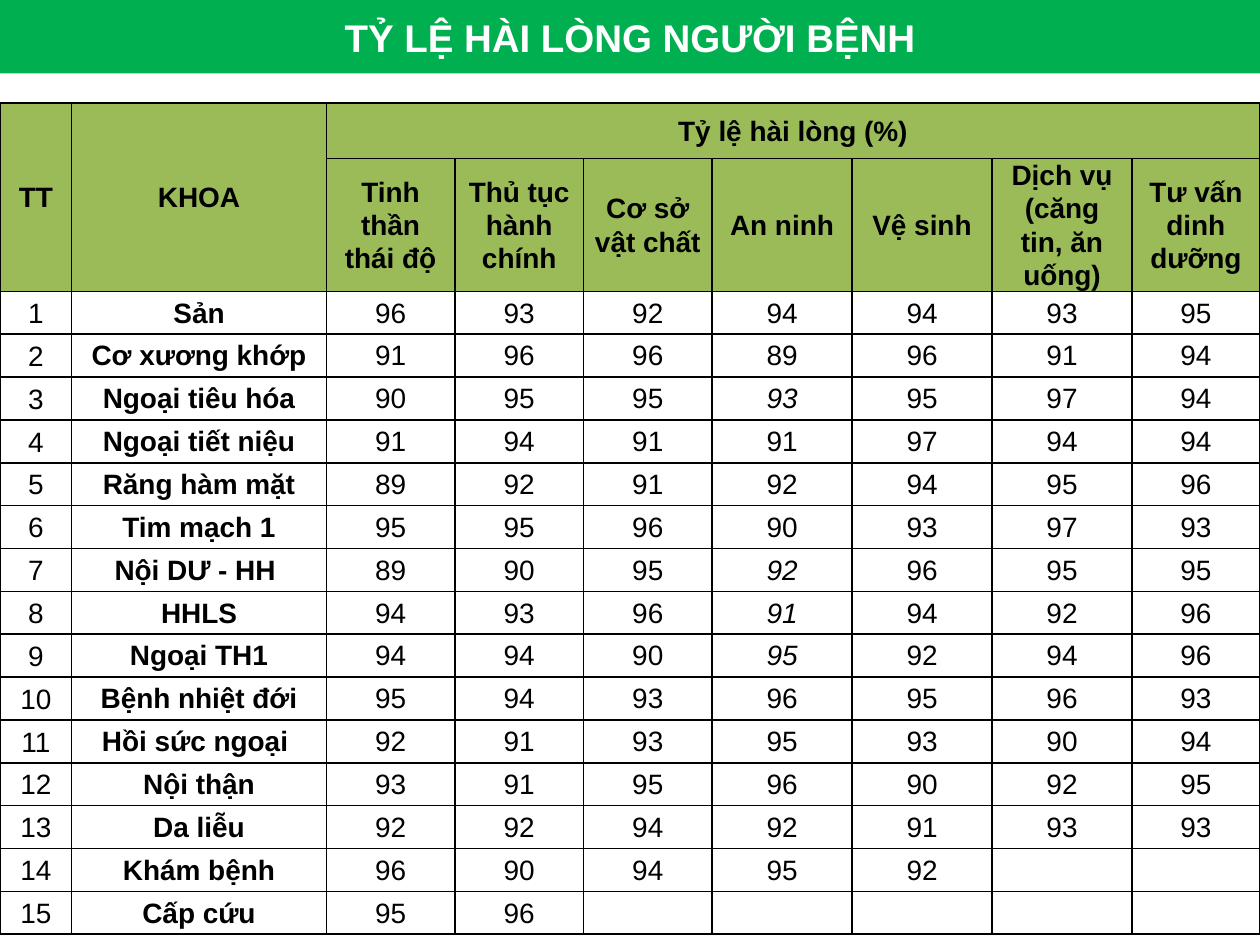
from typing import NamedTuple

from lxml.etree import SubElement
from pptx import Presentation
from pptx.dml.color import RGBColor
from pptx.enum.text import MSO_ANCHOR, MSO_AUTO_SIZE, PP_ALIGN
from pptx.oxml.ns import qn
from pptx.util import Pt

COLORS = {"banner": "00B050", "header": "9BBB59", "title": "FFFFFF",
          "text": "000000", "border": "000000"}
FONT = "Arial"
TEXT_SIZE = 16

COLUMN_WIDTHS = [41, 145.5] + [73.5] * 3 + [80] * 3 + [73]
HEADER_HEIGHTS = [31.5, 76]
ROW_HEIGHT = 24.5
TABLE_TOP = 59

CRITERIA = ["Tinh thần thái độ", "Thủ tục hành chính", "Cơ sở vật chất", "An ninh",
            "Vệ sinh", "Dịch vụ (căng tin, ăn uống)", "Tư vấn dinh dưỡng"]
SECURITY = CRITERIA.index("An ninh")


class Department(NamedTuple):
    name: str
    rates: list[int]
    italic_security: bool = False


class CellStyle(NamedTuple):
    side_inset: float
    top_inset: float
    line_spacing: float | None = None
    bold: bool = False
    italic: bool = False
    fill: str | None = None


HEADER = CellStyle(5, 0, 1.07, bold=True, fill="header")
NUMBER = CellStyle(5, 0, 1.07)
RATE = CellStyle(0.7, 0.7)
NAME = RATE._replace(bold=True)

DEPARTMENTS = [
    Department("Sản", [96, 93, 92, 94, 94, 93, 95]),
    Department("Cơ xương khớp", [91, 96, 96, 89, 96, 91, 94]),
    Department("Ngoại tiêu hóa", [90, 95, 95, 93, 95, 97, 94], True),
    Department("Ngoại tiết niệu", [91, 94, 91, 91, 97, 94, 94]),
    Department("Răng hàm mặt", [89, 92, 91, 92, 94, 95, 96]),
    Department("Tim mạch 1", [95, 95, 96, 90, 93, 97, 93]),
    Department("Nội DƯ - HH ", [89, 90, 95, 92, 96, 95, 95], True),
    Department("HHLS", [94, 93, 96, 91, 94, 92, 96], True),
    Department("Ngoại TH1", [94, 94, 90, 95, 92, 94, 96], True),
    Department("Bệnh nhiệt đới", [95, 94, 93, 96, 95, 96, 93]),
    Department("Hồi sức ngoại ", [92, 91, 93, 95, 93, 90, 94]),
    Department("Nội thận", [93, 91, 95, 96, 90, 92, 95]),
    Department("Da liễu", [92, 92, 94, 92, 91, 93, 93]),
    Department("Khám bệnh", [96, 90, 94, 95, 92]),
    Department("Cấp cứu", [95, 96]),
]


def color(name: str) -> RGBColor:
    return RGBColor.from_string(COLORS[name])


def format_span(span, size: float, color_name: str, bold: bool, italic: bool = False) -> None:
    span.font.name = FONT
    span.font.size = Pt(size)
    span.font.bold = bold
    span.font.italic = italic
    span.font.color.rgb = color(color_name)


def add_borders(cell) -> None:
    properties = cell._tc.get_or_add_tcPr()
    for position, side in enumerate(("lnL", "lnR", "lnT", "lnB")):
        line = properties.makeelement(qn(f"a:{side}"), {"w": str(Pt(1))})
        fill = SubElement(line, qn("a:solidFill"))
        SubElement(fill, qn("a:srgbClr"), val=COLORS["border"])
        properties.insert(position, line)


def write_cell(cell, text: str, style: CellStyle) -> None:
    cell.vertical_anchor = MSO_ANCHOR.MIDDLE
    cell.margin_left = cell.margin_right = Pt(style.side_inset)
    cell.margin_top, cell.margin_bottom = Pt(style.top_inset), 0
    para = cell.text_frame.paragraphs[0]
    para.text = text
    para.alignment = PP_ALIGN.CENTER
    if style.line_spacing:
        para.line_spacing = style.line_spacing
    for span in para.runs:
        format_span(span, TEXT_SIZE, "text", style.bold, style.italic)
    if not text:  # keeps the empty line from stretching its row
        SubElement(para._p, qn("a:endParaRPr"), sz=str(TEXT_SIZE * 100))
    if style.fill:
        cell.fill.solid()
        cell.fill.fore_color.rgb = color(style.fill)
    else:
        cell.fill.background()


def add_banner(page, text: str) -> None:
    banner = page.shapes.title
    banner.left, banner.top, banner.width, banner.height = 0, 0, Pt(720), Pt(42)
    banner.fill.solid()
    banner.fill.fore_color.rgb = color("banner")
    frame = banner.text_frame
    frame.text = text
    frame.word_wrap = True
    frame.auto_size = MSO_AUTO_SIZE.NONE
    frame.vertical_anchor = MSO_ANCHOR.MIDDLE
    para = frame.paragraphs[0]
    para.alignment = PP_ALIGN.CENTER
    format_span(para.runs[0], 22, "title", bold=True)


def add_rate_table(page) -> None:
    heights = HEADER_HEIGHTS + [ROW_HEIGHT] * len(DEPARTMENTS)
    table = page.shapes.add_table(
        len(heights), len(COLUMN_WIDTHS), 0, Pt(TABLE_TOP),
        Pt(sum(COLUMN_WIDTHS)), Pt(sum(heights))).table
    table.first_row = table.horz_banding = False
    for column, width in zip(table.columns, COLUMN_WIDTHS):
        column.width = Pt(width)
    for row, height in zip(table.rows, heights):
        row.height = Pt(height)

    for column, text in enumerate(("TT", "KHOA")):
        table.cell(0, column).merge(table.cell(1, column))
        write_cell(table.cell(0, column), text, HEADER)
    table.cell(0, 2).merge(table.cell(0, len(COLUMN_WIDTHS) - 1))
    write_cell(table.cell(0, 2), "Tỷ lệ hài lòng (%)", HEADER)
    for column, text in enumerate(CRITERIA, 2):
        write_cell(table.cell(1, column), text, HEADER)

    for number, department in enumerate(DEPARTMENTS, 1):
        row = number + 1
        write_cell(table.cell(row, 0), str(number), NUMBER)
        write_cell(table.cell(row, 1), department.name, NAME)
        for index in range(len(CRITERIA)):
            text = str(department.rates[index]) if index < len(department.rates) else ""
            italic = department.italic_security and index == SECURITY
            write_cell(table.cell(row, index + 2), text, RATE._replace(italic=italic))

    for cell in table.iter_cells():
        add_borders(cell)


def main() -> None:
    deck = Presentation()
    deck.slide_width, deck.slide_height = Pt(720), Pt(540)
    page = deck.slides.add_slide(deck.slide_layouts.get_by_name("Title Only"))
    add_banner(page, "TỶ LỆ HÀI LÒNG NGƯỜI BỆNH")
    add_rate_table(page)
    deck.save("out.pptx")


if __name__ == "__main__":
    main()
